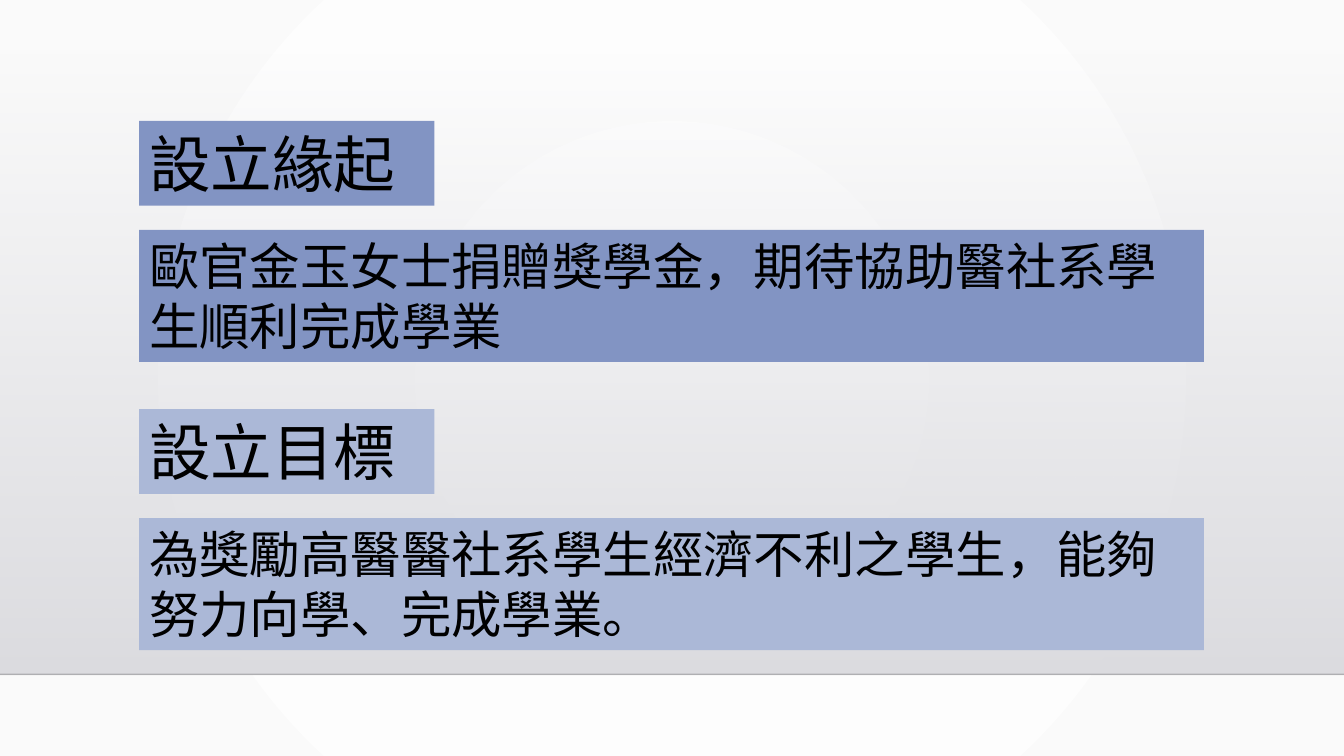
from lxml.etree import SubElement
from pptx import Presentation
from pptx.dml.color import RGBColor
from pptx.enum.shapes import MSO_CONNECTOR, MSO_SHAPE
from pptx.enum.text import MSO_AUTO_SIZE
from pptx.oxml.ns import qn
from pptx.util import Inches, Pt

COLORS = {
    "centre": "FFFFFF", "edge": "FAFAFA",
    "wall_top": "DCDCE0", "wall_bottom": "DEDEE2", "floor_line": "000001",
    "origin": "8294C3", "goal": "ABB8D7", "text": "000000",
}
FONT = "Times New Roman"
SLIDE_WIDTH, FLOOR_TOP = 13.33, 6.69


def set_gradient(fill, *names):
    fill.gradient()
    for stop, name in zip(fill.gradient_stops, names):
        stop.color.rgb = RGBColor.from_string(COLORS[name])


def set_opacity(element, percent):
    """Make the first colour inside the element partly transparent."""
    color = next(element.iter(qn("a:srgbClr")))
    SubElement(color, qn("a:alpha"), val=str(percent * 1000))


presentation = Presentation()
presentation.slide_width = Inches(SLIDE_WIDTH)
presentation.slide_height = Inches(7.5)
slide = presentation.slides.add_slide(presentation.slide_layouts[6])

# Background: circular gradient from the centre
set_gradient(slide.background.fill, "centre", "edge")
gradient = next(slide.element.iter(qn("a:gradFill")))
gradient.remove(gradient.find(qn("a:lin")))
circle = SubElement(gradient, qn("a:path"), path="circle")
SubElement(circle, qn("a:fillToRect"), l="50000", t="50000", r="50000", b="50000")

# Wall fading in towards the floor line
wall = slide.shapes.add_shape(
    MSO_SHAPE.RECTANGLE, 0, Inches(0.51), Inches(SLIDE_WIDTH), Inches(FLOOR_TOP - 0.51))
wall.shadow.inherit = False
wall.line.fill.background()
set_gradient(wall.fill, "wall_top", "wall_bottom")
wall.fill.gradient_angle = 270
set_opacity(wall.element, 0)

floor_line = slide.shapes.add_connector(
    MSO_CONNECTOR.STRAIGHT, 0, Inches(FLOOR_TOP), Inches(SLIDE_WIDTH), Inches(FLOOR_TOP))
floor_line.line.color.rgb = RGBColor.from_string(COLORS["floor_line"])
floor_line.line.width = Pt(1)
set_opacity(floor_line.element, 20)
SubElement(floor_line.element.spPr, qn("a:effectLst"))

# Two sections, each a heading above its statement
sections = [
    (1.2, "origin", "設立緣起", "歐官金玉女士捐贈獎學金，期待協助醫社系學生順利完成學業"),
    (4.06, "goal", "設立目標", "為獎勵高醫醫社系學生經濟不利之學生，能夠努力向學、完成學業。"),
]
for top, color, heading, statement in sections:
    for text, offset, width, height, size in (
        (heading, 0, 2.93, 0.84, 44),
        (statement, 1.08, 10.56, 1.31, 36),
    ):
        box = slide.shapes.add_textbox(
            Inches(1.38), Inches(top + offset), Inches(width), Inches(height))
        box.fill.solid()
        box.fill.fore_color.rgb = RGBColor.from_string(COLORS[color])
        frame = box.text_frame
        frame.word_wrap = True
        frame.auto_size = MSO_AUTO_SIZE.SHAPE_TO_FIT_TEXT
        run = frame.paragraphs[0].add_run()
        run.text = text
        run.font.name = FONT
        run.font.size = Pt(size)
        run.font.color.rgb = RGBColor.from_string(COLORS["text"])

presentation.save("out.pptx")
